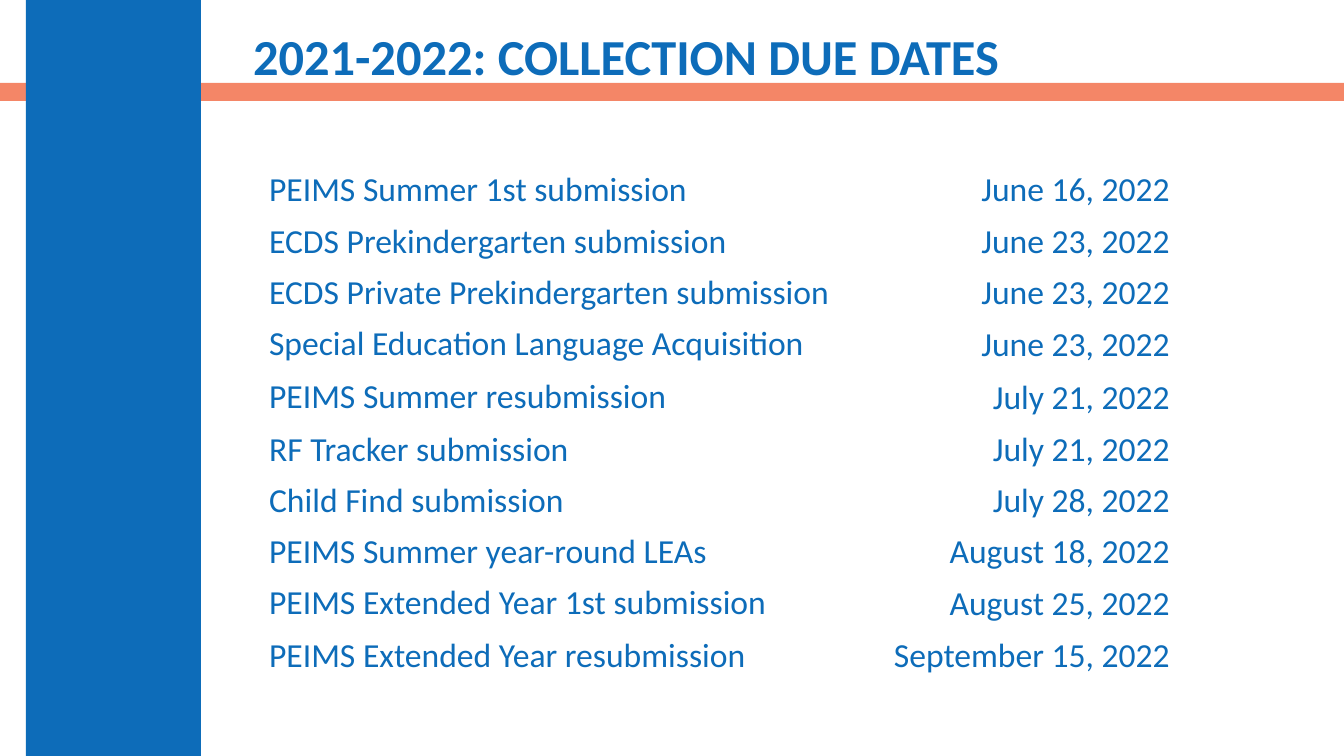
from pptx import Presentation
from pptx import util as u
from pptx.dml.color import RGBColor
from pptx.enum import shapes, text
from pptx.oxml.ns import qn
from lxml import etree

INK = {"blue": "0D6CB9", "coral": "F16038"}

DATES = [
    ("PEIMS Summer 1st submission", "June 16, 2022"),
    ("ECDS Prekindergarten submission", "June 23, 2022"),
    ("ECDS Private Prekindergarten submission", "June 23, 2022"),
    ("Special Education Language Acquisition", "June 23, 2022"),
    ("PEIMS Summer resubmission", "July 21, 2022"),
    ("RF Tracker submission", "July 21, 2022"),
    ("Child Find submission", "July 28, 2022"),
    ("PEIMS Summer year-round LEAs", "August 18, 2022"),
    ("PEIMS Extended Year 1st submission", "August 25, 2022"),
    ("PEIMS Extended Year resubmission", "September 15, 2022"),
]
TALL = {3, 4, 8}  # rows whose date cell has a deeper margin


def px(n):
    return u.Emu(round(n * 914400 / 100.8))


class Deck:
    def __init__(self, wide, high):
        self.prs = Presentation()
        self.prs.slide_width, self.prs.slide_height = px(wide), px(high)
        self.slide = self.prs.slides.add_slide(self.prs.slide_layouts[5])
        self.shapes = self.slide.shapes

    def style(self, para, size, align, **extra):
        para.alignment = align
        form = {"name": "Calibri", "size": u.Pt(size), **extra}
        for key, val in form.items():
            setattr(para.font, key, val)
        para.font.color.rgb = RGBColor.from_string(INK["blue"])

    def bar(self, box, ink, alpha=100):
        bar = self.shapes.add_shape(shapes.MSO_SHAPE.RECTANGLE, *map(px, box))
        bar.shadow.inherit = False
        bar.line.fill.background()
        bar.fill.solid()
        bar.fill.fore_color.rgb = RGBColor.from_string(INK[ink])
        if alpha < 100:
            tint = bar.fill._xPr.find(".//" + qn("a:srgbClr"))
            etree.SubElement(tint, qn("a:alpha"), val=str(alpha * 1000))

    def title(self, box, words):
        """Fill the title placeholder and bring it in front of the bars."""
        head = self.shapes.title
        head.left, head.top, head.width, head.height = map(px, box)
        frame = head.text_frame
        frame.text = words
        form = {"word_wrap": True, "auto_size": text.MSO_AUTO_SIZE.NONE,
                "vertical_anchor": text.MSO_ANCHOR.MIDDLE}
        for key, val in form.items():
            setattr(frame, key, val)
        para = frame.paragraphs[0]
        para.line_spacing = 0.9
        self.style(para, 36, text.PP_ALIGN.LEFT, bold=True)
        self.shapes._spTree.append(head._element)

    def table(self, box, cols, rows, tall):
        grid = self.shapes.add_table(len(rows), len(cols), *map(px, box)).table
        grid.first_row = grid.horz_banding = False
        for col, wide in zip(grid.columns, cols):
            col.width = px(wide)
        sides = text.PP_ALIGN.LEFT, text.PP_ALIGN.RIGHT
        for r, row in enumerate(rows):
            grid.rows[r].height = px(53 if r in tall else 51)
            for c, words in enumerate(row):
                cell = grid.cell(r, c)
                cell.fill.background()
                cell.text = words
                self.style(cell.text_frame.paragraphs[0], 24, sides[c])
                if c and r in tall:
                    cell.margin_top = cell.margin_bottom = px(6)


def main():
    deck = Deck(1344, 756)
    deck.bar((0, 83, 1344, 18), "coral", 76)
    deck.bar((26, 0, 175, 756), "blue")
    deck.title((243, 18, 1062, 83), "2021-2022: COLLECTION DUE DATES")
    deck.table((259, 165, 921, 516), (615, 306), DATES, TALL)
    deck.prs.save("out.pptx")


if __name__ == "__main__":
    main()
